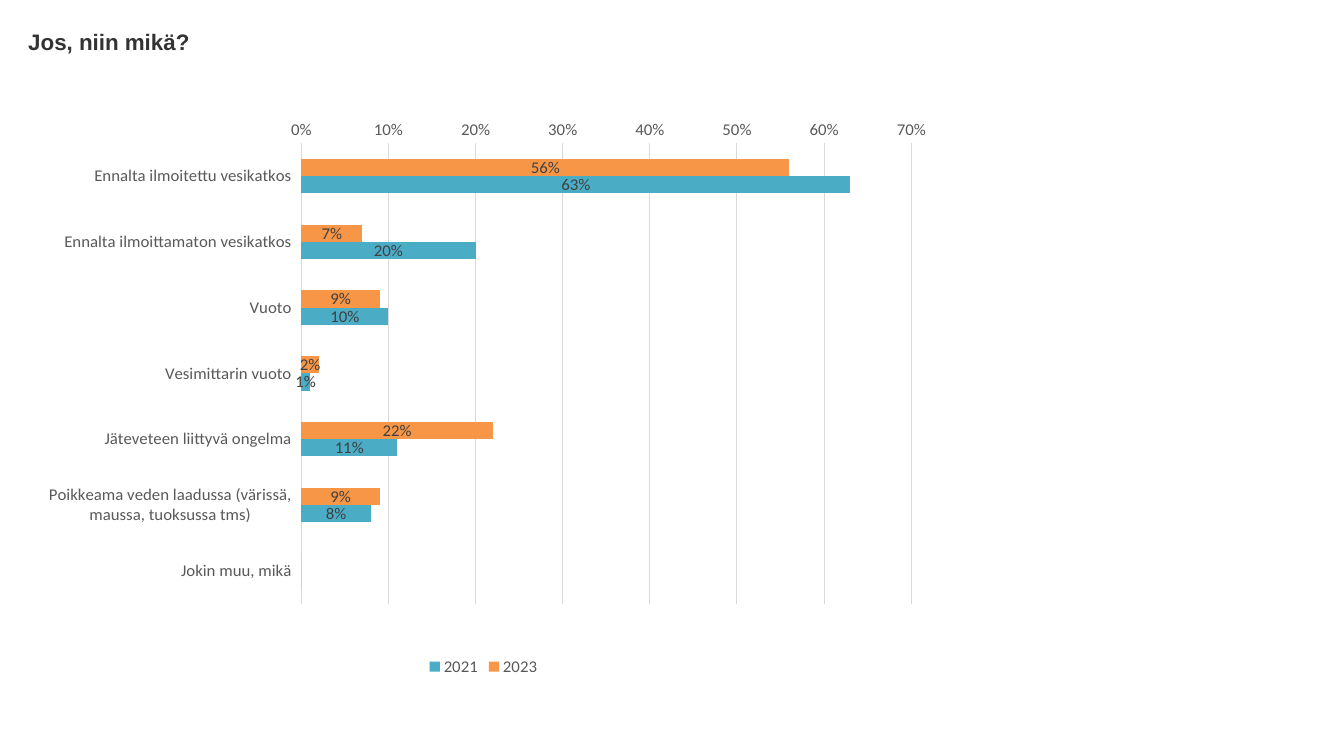
from dataclasses import dataclass

import lxml.etree
import pptx
import pptx.chart.data
import pptx.dml.color
import pptx.enum.chart
import pptx.enum.text
import pptx.oxml.ns
import pptx.util

RGBColor = pptx.dml.color.RGBColor
TITLE_COLOR = RGBColor(0x33, 0x33, 0x33)
AXIS_TEXT = RGBColor(0x59, 0x59, 0x59)
LABEL_TEXT = RGBColor(0x40, 0x40, 0x40)
GRID_GRAY = RGBColor(0xD9, 0xD9, 0xD9)
ORANGE = RGBColor(0xF7, 0x96, 0x46)
TEAL = RGBColor(0x4B, 0xAC, 0xC6)

SLIDE_WIDTH = pptx.util.Inches(13.33)
SLIDE_HEIGHT = pptx.util.Inches(7.5)


@dataclass(frozen=True)
class Area:
    """A rectangle given as shares of its container's width and height."""
    left: float
    top: float
    width: float
    height: float

    def on_slide(self) -> tuple[int, int, int, int]:
        return (int(self.left * SLIDE_WIDTH), int(self.top * SLIDE_HEIGHT),
                int(self.width * SLIDE_WIDTH), int(self.height * SLIDE_HEIGHT))


@dataclass(frozen=True)
class SurveyYear:
    name: str
    shares: tuple[float, ...]
    color: RGBColor


TITLE_AREA = Area(0.28 / 13.33, 0.28 / 7.5, 12.78 / 13.33, 0.27 / 7.5)
CHART_AREA = Area(0.28 / 13.33, 1.19 / 7.5, 9.03 / 13.33, 5.56 / 7.5)
PLOT_AREA = Area(0.3, 0.02, 0.67, 0.84)

REASONS = (
    "Ennalta ilmoitettu vesikatkos",
    "Ennalta ilmoittamaton vesikatkos",
    "Vuoto",
    "Vesimittarin vuoto",
    "Jäteveteen liittyvä ongelma",
    "Poikkeama veden laadussa (värissä, maussa, tuoksussa tms)",
    "Jokin muu, mikä",
)
YEARS = (
    SurveyYear("2023", (0.56, 0.07, 0.09, 0.02, 0.22, 0.09, 0), ORANGE),
    SurveyYear("2021", (0.63, 0.2, 0.1, 0.01, 0.11, 0.08, 0), TEAL),
)


def set_font(font, color: RGBColor, size: int = 12, name: str = "Calibri",
             bold: bool = False) -> None:
    font.name = name
    font.size = pptx.util.Pt(size)
    font.bold = bold
    font.color.rgb = color


def set_line(line) -> None:
    line.color.rgb = GRID_GRAY
    line.width = pptx.util.Pt(0.75)


def fix_plot_area(chart, area: Area) -> None:
    """Pin the inner plot area to shares of the chart."""
    qn = pptx.oxml.ns.qn
    plot_area = chart.element.find(".//" + qn("c:plotArea"))
    for automatic in plot_area.findall(qn("c:layout")):
        plot_area.remove(automatic)
    layout = lxml.etree.Element(qn("c:layout"))
    manual = lxml.etree.SubElement(layout, qn("c:manualLayout"))
    settings = (("layoutTarget", "inner"), ("xMode", "edge"), ("yMode", "edge"),
                ("x", area.left), ("y", area.top),
                ("w", area.width), ("h", area.height))
    for tag, value in settings:
        lxml.etree.SubElement(manual, qn(f"c:{tag}")).set("val", str(value))
    plot_area.insert(0, layout)


def add_title(slide) -> None:
    frame = slide.shapes.add_textbox(*TITLE_AREA.on_slide()).text_frame
    frame.margin_left = frame.margin_right = 0
    frame.margin_top = frame.margin_bottom = 0
    frame.word_wrap = True
    frame.auto_size = pptx.enum.text.MSO_AUTO_SIZE.SHAPE_TO_FIT_TEXT
    heading = frame.paragraphs[0]
    heading.text = "Jos, niin mikä?"
    set_font(heading.font, TITLE_COLOR, 16, "Arial", True)


def style_axes(chart) -> None:
    enums = pptx.enum.chart
    reasons, shares = chart.category_axis, chart.value_axis
    for axis in (reasons, shares):
        axis.major_tick_mark = axis.minor_tick_mark = enums.XL_TICK_MARK.NONE
        set_font(axis.tick_labels.font, AXIS_TEXT)
    reasons.reverse_order = True
    reasons.crosses = enums.XL_AXIS_CROSSES.MAXIMUM
    reasons.tick_label_position = enums.XL_TICK_LABEL_POSITION.LOW
    set_line(reasons.format.line)

    shares.minimum_scale, shares.maximum_scale = 0, 0.7
    shares.major_unit = 0.1
    shares.tick_labels.number_format = "0%"
    shares.tick_labels.number_format_is_linked = False
    shares.format.line.fill.background()
    set_line(shares.major_gridlines.format.line)


def style_bars(plot) -> None:
    plot.gap_width = 182
    plot.overlap = 0
    plot.vary_by_categories = False
    plot.has_data_labels = True
    labels = plot.data_labels
    labels.show_value = True
    labels.number_format = "0%;;"
    labels.number_format_is_linked = False
    labels.position = pptx.enum.chart.XL_LABEL_POSITION.CENTER
    set_font(labels.font, LABEL_TEXT)
    for bars, year in zip(plot.series, YEARS):
        bars.invert_if_negative = False
        bars.format.fill.solid()
        bars.format.fill.fore_color.rgb = year.color


def add_reason_chart(slide) -> None:
    chart_data = pptx.chart.data.CategoryChartData(number_format="0%")
    chart_data.categories = REASONS
    for year in YEARS:
        chart_data.add_series(year.name, year.shares)
    chart = slide.shapes.add_chart(
        pptx.enum.chart.XL_CHART_TYPE.BAR_CLUSTERED,
        *CHART_AREA.on_slide(), chart_data).chart
    chart.has_title = False
    chart.font.name = "Calibri"
    chart.font.size = pptx.util.Pt(10)
    chart.has_legend = True
    chart.legend.position = pptx.enum.chart.XL_LEGEND_POSITION.BOTTOM
    chart.legend.include_in_layout = False
    set_font(chart.legend.font, AXIS_TEXT)
    style_axes(chart)
    style_bars(chart.plots[0])
    fix_plot_area(chart, PLOT_AREA)


def main() -> None:
    deck = pptx.Presentation()
    deck.slide_width, deck.slide_height = SLIDE_WIDTH, SLIDE_HEIGHT
    slide = deck.slides.add_slide(deck.slide_layouts[6])
    add_title(slide)
    add_reason_chart(slide)
    deck.save("out.pptx")


if __name__ == "__main__":
    main()
